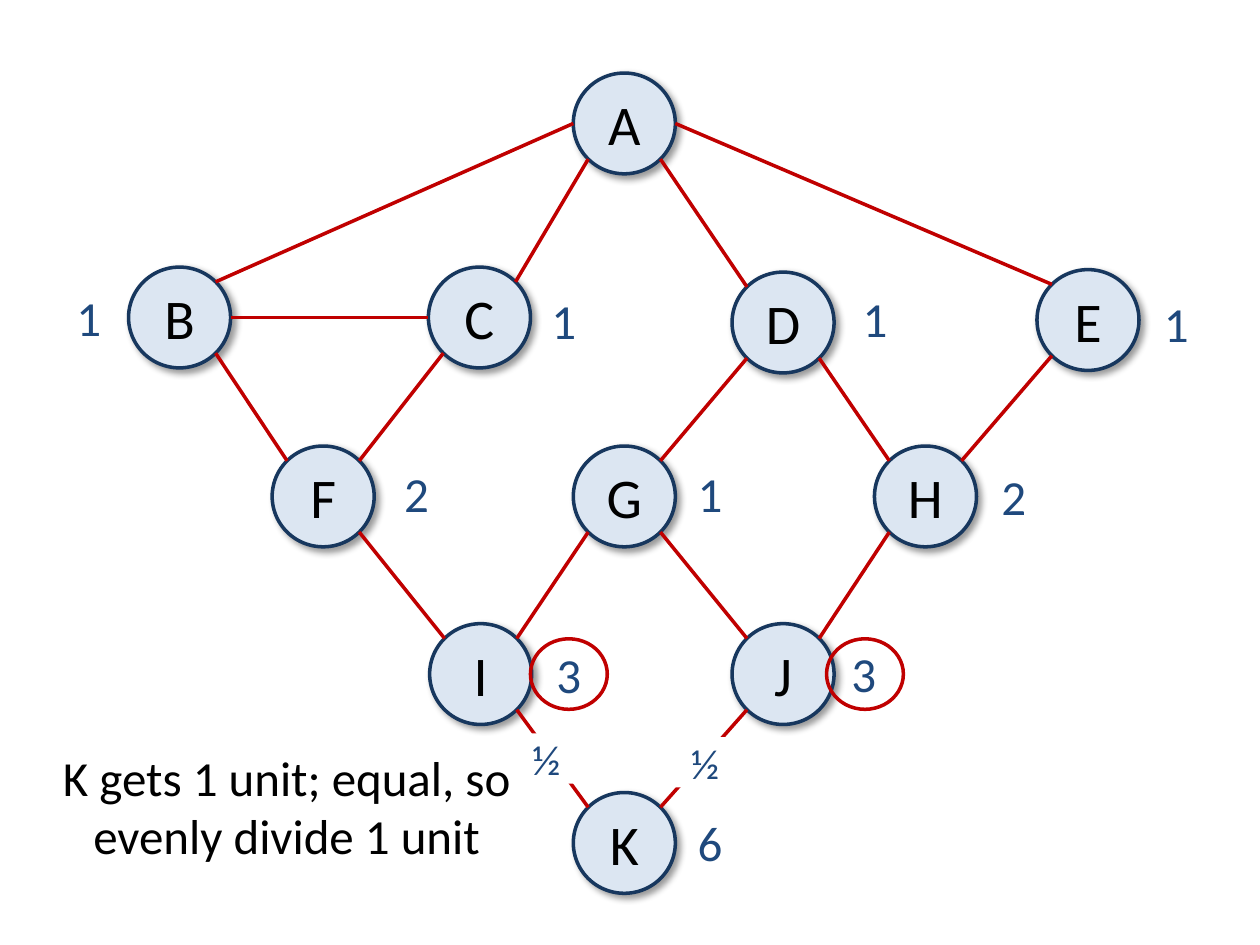
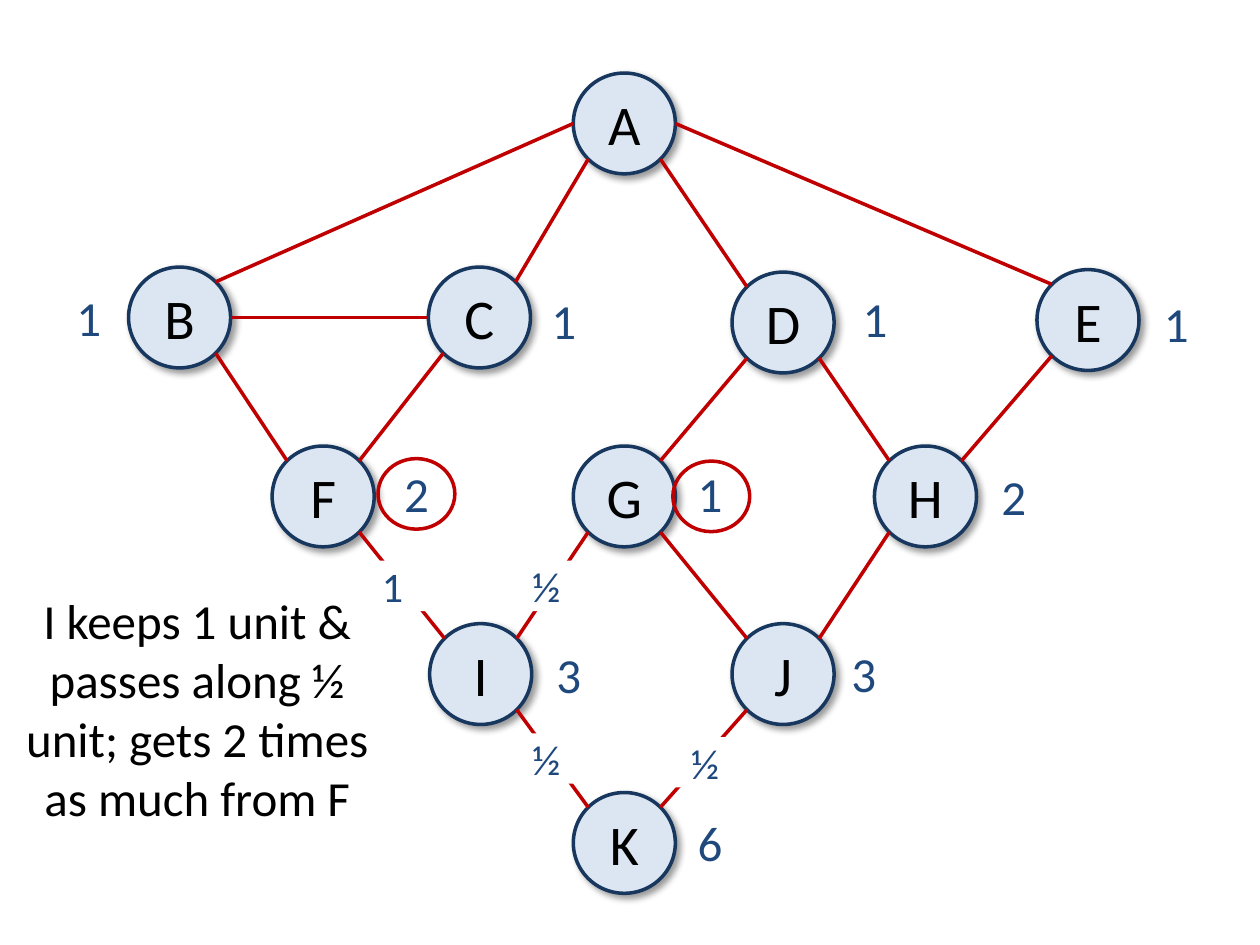
from math import cos, radians, sin

from lxml.etree import SubElement
from pptx import Presentation
from pptx.dml.color import RGBColor
from pptx.enum.shapes import MSO_CONNECTOR, MSO_SHAPE
from pptx.enum.text import MSO_ANCHOR, MSO_AUTO_SIZE, PP_ALIGN
from pptx.oxml.ns import qn
from pptx.util import Inches, Pt

BLACK = RGBColor(0x00, 0x00, 0x00)
WHITE = RGBColor(0xFF, 0xFF, 0xFF)
NODE_FILL = RGBColor(0xDC, 0xE6, 0xF2)
NODE_LINE = RGBColor(0x17, 0x37, 0x5E)
EDGE_RED = RGBColor(0xC0, 0x00, 0x00)
VALUE_BLUE = RGBColor(0x1F, 0x49, 0x7D)

NODE_WIDTH, NODE_HEIGHT = 0.81, 0.8
VALUE_WIDTH, VALUE_HEIGHT = 0.61, 0.57
RING_HEIGHT, SHARE_HEIGHT = 0.56, 0.4

NODES = {
    "A": (4.55, 0.58),
    "B": (1.02, 2.12), "C": (3.4, 2.12), "D": (5.81, 2.16), "E": (8.23, 2.14),
    "F": (2.16, 3.54), "G": (4.55, 3.54), "H": (6.94, 3.54),
    "I": (3.41, 4.95), "J": (5.81, 4.95),
    "K": (4.55, 6.29),
}
LEFT, RIGHT = 2, 6
UPPER_LEFT, LOWER_LEFT, LOWER_RIGHT, UPPER_RIGHT = 1, 3, 5, 7
EDGES = [("A", LEFT, "B", UPPER_RIGHT), ("A", RIGHT, "E", UPPER_LEFT), ("B", RIGHT, "C", LEFT)]
EDGES += [(parent, LOWER_LEFT, child, UPPER_RIGHT) for parent, child in ("AC", "CF", "DG", "EH", "GI", "HJ", "JK")]
EDGES += [(parent, LOWER_RIGHT, child, UPPER_LEFT) for parent, child in ("AD", "BF", "DH", "FI", "GJ", "IK")]

VALUES = [
    ("1", 0.4, 2.23), ("1", 4.17, 2.26), ("1", 6.64, 2.24), ("1", 9.03, 2.28),
    ("2", 3, 3.63), ("1", 5.33, 3.63), ("2", 7.74, 3.65),
    ("3", 4.21, 5.07), ("3", 6.55, 5.06),
    ("6", 5.33, 6.4),
]
K_SHARES = [("½ ", 4.07, 5.82), ("½ ", 5.33, 5.85)]
STEPS = [
    {
        "rings": [(4.21, 5.07), (6.56, 5.07)],
        "note": ("K gets 1 unit; equal, so evenly divide 1 unit", 0.33, 5.88, 3.89, 1.04),
        "shares": K_SHARES,
    },
    {
        "rings": [(3, 3.64), (5.34, 3.66)],
        "note": ("I keeps 1 unit & passes along ½ unit; gets 2 times as much from F", 0, 4.64, 3.13, 1.99),
        "shares": K_SHARES + [("½ ", 4.07, 4.45), ("1", 2.81, 4.45)],
    },
]


def write_text(shape, text, size, color, **frame_format):
    frame = shape.text_frame
    frame_format = {"word_wrap": True, "vertical_anchor": MSO_ANCHOR.TOP, **frame_format}
    for name, value in frame_format.items():
        setattr(frame, name, value)
    paragraph = frame.paragraphs[0]
    paragraph.alignment = PP_ALIGN.CENTER
    run = paragraph.add_run()
    run.text = text
    for name, value in {"name": "Calibri", "size": Pt(size)}.items():
        setattr(run.font, name, value)
    run.font.color.rgb = color


def add_figure(slide, preset, left, top, width, height, fill, line):
    shape = slide.shapes.add_shape(preset, Inches(left), Inches(top), Inches(width), Inches(height))
    shape.shadow.inherit = False
    if fill is None:
        shape.fill.background()
    else:
        shape.fill.solid()
        shape.fill.fore_color.rgb = fill
    if line is None:
        shape.line.fill.background()
    else:
        shape.line.color.rgb = line
        shape.line.width = Pt(2)
    return shape


presentation = Presentation()
presentation.slide_width = Inches(10)
presentation.slide_height = Inches(7.5)

for step in STEPS:
    slide = presentation.slides.add_slide(presentation.slide_layouts[6])

    node_shapes = {}
    for letter, (left, top) in NODES.items():
        node = add_figure(slide, MSO_SHAPE.OVAL, left, top, NODE_WIDTH, NODE_HEIGHT, NODE_FILL, NODE_LINE)
        effects = node._element.spPr.find(qn("a:effectLst"))
        shadow = SubElement(effects, qn("a:outerShdw"), blurRad=str(Pt(4)), dist=str(Pt(3)),
                            dir="2700000", algn="tl", rotWithShape="0")
        shadow_color = SubElement(shadow, qn("a:srgbClr"), val=str(BLACK))
        SubElement(shadow_color, qn("a:alpha"), val="40000")
        write_text(node, letter, 32, BLACK, vertical_anchor=MSO_ANCHOR.MIDDLE, margin_left=0, margin_right=0)
        node_shapes[letter] = node

    for start, start_site, end, end_site in EDGES:
        points = []
        for letter, site in ((start, start_site), (end, end_site)):
            left, top = NODES[letter]
            angle = radians(90 + 45 * site)
            points.append(Inches(left + NODE_WIDTH / 2 * (1 + cos(angle))))
            points.append(Inches(top + NODE_HEIGHT / 2 * (1 - sin(angle))))
        connector = slide.shapes.add_connector(MSO_CONNECTOR.STRAIGHT, *points)
        connector.line.color.rgb = EDGE_RED
        connector.line.width = Pt(2)
        SubElement(connector._element.spPr, qn("a:effectLst"))
        links = connector._element.find(".//" + qn("p:cNvCxnSpPr"))
        for tag, letter, site in (("a:stCxn", start, start_site), ("a:endCxn", end, end_site)):
            SubElement(links, qn(tag), id=str(node_shapes[letter].shape_id), idx=str(site))

    note, *note_box = step["note"]
    texts = [(text, VALUE_BLUE, (left, top, VALUE_WIDTH, VALUE_HEIGHT)) for text, left, top in VALUES]
    texts.append((note, BLACK, note_box))
    for text, color, box in texts:
        textbox = slide.shapes.add_textbox(*[Inches(length) for length in box])
        write_text(textbox, text, 28, color, auto_size=MSO_AUTO_SIZE.SHAPE_TO_FIT_TEXT)

    for left, top in step["rings"]:
        add_figure(slide, MSO_SHAPE.OVAL, left, top, VALUE_WIDTH, RING_HEIGHT, None, EDGE_RED)

    for text, left, top in step["shares"]:
        share = add_figure(slide, MSO_SHAPE.RECTANGLE, left, top, VALUE_WIDTH, SHARE_HEIGHT, WHITE, None)
        write_text(share, text, 24, VALUE_BLUE, margin_top=0, margin_bottom=0,
                   auto_size=MSO_AUTO_SIZE.SHAPE_TO_FIT_TEXT)

presentation.save("out.pptx")
